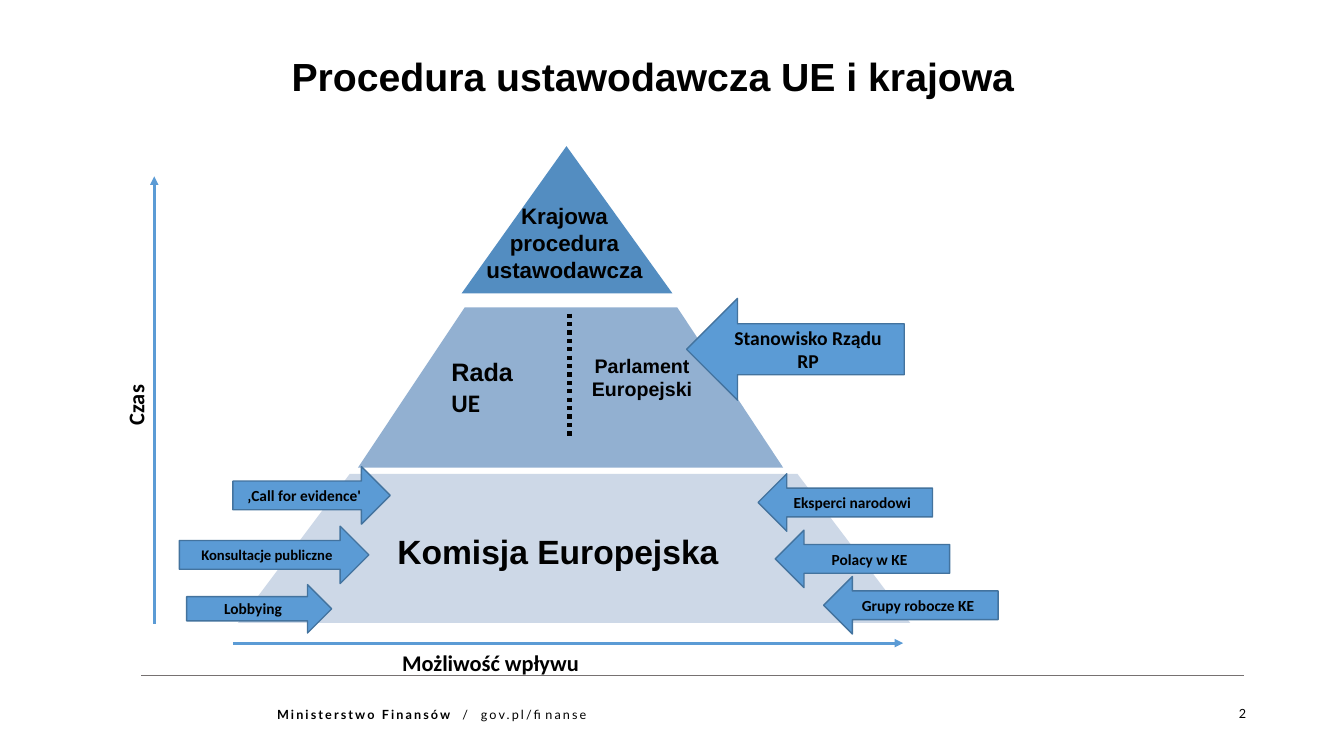
from itertools import cycle
from lxml.etree import SubElement
from pptx import Presentation
from pptx.dml.color import RGBColor
from pptx.enum.dml import MSO_LINE
from pptx.enum.shapes import MSO_CONNECTOR, MSO_SHAPE
from pptx.enum.text import MSO_ANCHOR, PP_ALIGN
from pptx.oxml.ns import qn
from pptx.util import Inches, Pt

BLACK = RGBColor(0x00, 0x00, 0x00)
GREY = RGBColor(0x76, 0x71, 0x71)
BLUE = RGBColor(0x5B, 0x9B, 0xD5)
DARK_BLUE = RGBColor(0x43, 0x73, 0x9E)
TOP_BLUE = RGBColor(0x53, 0x8D, 0xC1)
MIDDLE_BLUE = RGBColor(0x92, 0xB0, 0xD1)
BASE_BLUE = RGBColor(0xCD, 0xD8, 0xE7)

LEFT, CENTER, RIGHT = PP_ALIGN.LEFT, PP_ALIGN.CENTER, PP_ALIGN.RIGHT

deck = Presentation()
deck.slide_width, deck.slide_height = Inches(13.33), Inches(7.5)
slide = deck.slides.add_slide(deck.slide_layouts[6])
shapes = slide.shapes


def grid(*cells):
    """Turn alternating columns and rows of a 100 x 100 grid into lengths."""
    sides = cycle((deck.slide_width, deck.slide_height))
    return [round(cell * side / 100) for cell, side in zip(cells, sides)]


def write(frame, align, size, runs):
    """Fill a text frame with (text, font, bold) runs; return its paragraph."""
    frame.word_wrap = True
    paragraph = frame.paragraphs[0]
    paragraph.alignment = align
    for text, font, bold in runs:
        run = paragraph.add_run()
        run.text = text
        run.font.name, run.font.size, run.font.bold = font, Pt(size), bold
        run.font.color.rgb = BLACK
    return paragraph


# Footer and slide number
for cells, align, runs in (
    ((19.88, 93.07, 33.9, 3.07), LEFT,
     [("Ministerstwo Finansów\u00a0 ", "Lato", True), ("/\u00a0 gov.pl/finanse", "Lato", False)]),
    ((89.63, 92.93, 3.83, 2.93), RIGHT, [("2", "Lato", False)]),
):
    footer = write(shapes.add_textbox(*grid(*cells)).text_frame, align, 9, runs)
    footer.line_spacing = 0.9
    for run in footer.runs:
        run.font._element.set("spc", "150")

# Pyramid levels, from the top down
for corners, colour in (
    (((34.35, 38.8), (42.15, 19.33), (50.03, 38.8)), TOP_BLUE),
    (((26.63, 61.87), (34.58, 40.67), (50.4, 40.67), (58.28, 61.87)), MIDDLE_BLUE),
    (((17.7, 82.4), (26.03, 62.67), (59.33, 62.67), (67.73, 82.4)), BASE_BLUE),
):
    first, *others = [grid(*corner) for corner in corners]
    outline = shapes.build_freeform(*first)
    outline.add_line_segments(others, close=True)
    level = outline.convert_to_shape()
    level.shadow.inherit = False
    level.fill.solid()
    level.fill.fore_color.rgb = colour
    level.line.fill.background()

# Footer rule, influence axis, time axis, divider between Council and Parliament
for ends, colour, width, dash, arrow in (
    ((10.5, 89.33, 92.55, 89.33), GREY, 0.5, None, False),
    ((17.33, 85.07, 67.2, 85.07), BLUE, 2, None, True),
    ((11.48, 82.53, 11.48, 23.33), BLUE, 2, None, True),
    ((42.38, 41.47, 42.38, 58), BLACK, 3, MSO_LINE.ROUND_DOT, False),
):
    line = shapes.add_connector(MSO_CONNECTOR.STRAIGHT, *grid(*ends))
    line.line.color.rgb = colour
    line.line.width = Pt(width)
    if dash:
        line.line.dash_style = dash
    properties = line._element.spPr
    if arrow:
        SubElement(properties.find(qn("a:ln")), qn("a:tailEnd"), type="triangle")
    SubElement(properties, qn("a:effectLst"))

# Arrows of influence
TO_LEFT, TO_RIGHT = MSO_SHAPE.LEFT_ARROW, MSO_SHAPE.RIGHT_ARROW
for text, direction, cells, size in (
    ("Stanowisko Rządu RP", TO_LEFT, (51.08, 39.47, 16.2, 13.47), 14),
    ("Grupy robocze KE", TO_LEFT, (61.28, 76.27, 12.98, 7.6), 11),
    ("Polacy w KE", TO_LEFT, (57.68, 70.13, 12.98, 7.6), 11),
    ("Eksperci narodowi", TO_LEFT, (56.4, 62.67, 12.98, 7.6), 11),
    ("Lobbying", TO_RIGHT, (13.88, 77.33, 10.8, 6.4), 11),
    ("Konsultacje publiczne", TO_RIGHT, (13.35, 69.6, 14.1, 7.6), 10.5),
    ("‚Call for evidence'", TO_RIGHT, (17.33, 61.73, 11.7, 7.6), 11),
):
    influence = shapes.add_shape(direction, *grid(*cells))
    influence.shadow.inherit = False
    influence.fill.solid()
    influence.fill.fore_color.rgb = BLUE
    influence.line.color.rgb = DARK_BLUE
    influence.line.width = Pt(1)
    influence.text_frame.vertical_anchor = MSO_ANCHOR.MIDDLE
    write(influence.text_frame, CENTER, size, [(text, "Calibri", True)])

# Title, level names and axis name
for text, font, size, align, cells in (
    ("Procedura ustawodawcza UE i krajowa", "Arial", 28, CENTER, (11.9, 6.27, 73.35, 7.6)),
    ("Krajowa procedura ustawodawcza", "Arial", 16, CENTER, (34.58, 26.13, 14.85, 12)),
    ("Parlament Europejski", "Arial", 14, CENTER, (42.83, 46.13, 9.9, 8)),
    ("Komisja Europejska", "Arial", 24, CENTER, (28.8, 69.6, 25.43, 6.67)),
    ("Możliwość wpływu", "Calibri", 16, LEFT, (29.18, 85.2, 26.55, 4.93)),
):
    label = shapes.add_textbox(*grid(*cells))
    write(label.text_frame, align, size, [(text, font, True)])

# Council of the EU, in two fonts
council = shapes.add_textbox(*grid(32.85, 46.53, 8.33, 9.47))
write(council.text_frame, LEFT, 18, [("Rada", "Arial", True), (" UE", "Calibri", True)])

# Time axis name, read upwards
time_name = shapes.add_textbox(*grid(8.7, 29.07, 3.53, 49.07))
write(time_name.text_frame, CENTER, 16, [("Czas", "Calibri", True)])
time_name.text_frame._txBody.bodyPr.set("vert", "vert270")

deck.save("out.pptx")
